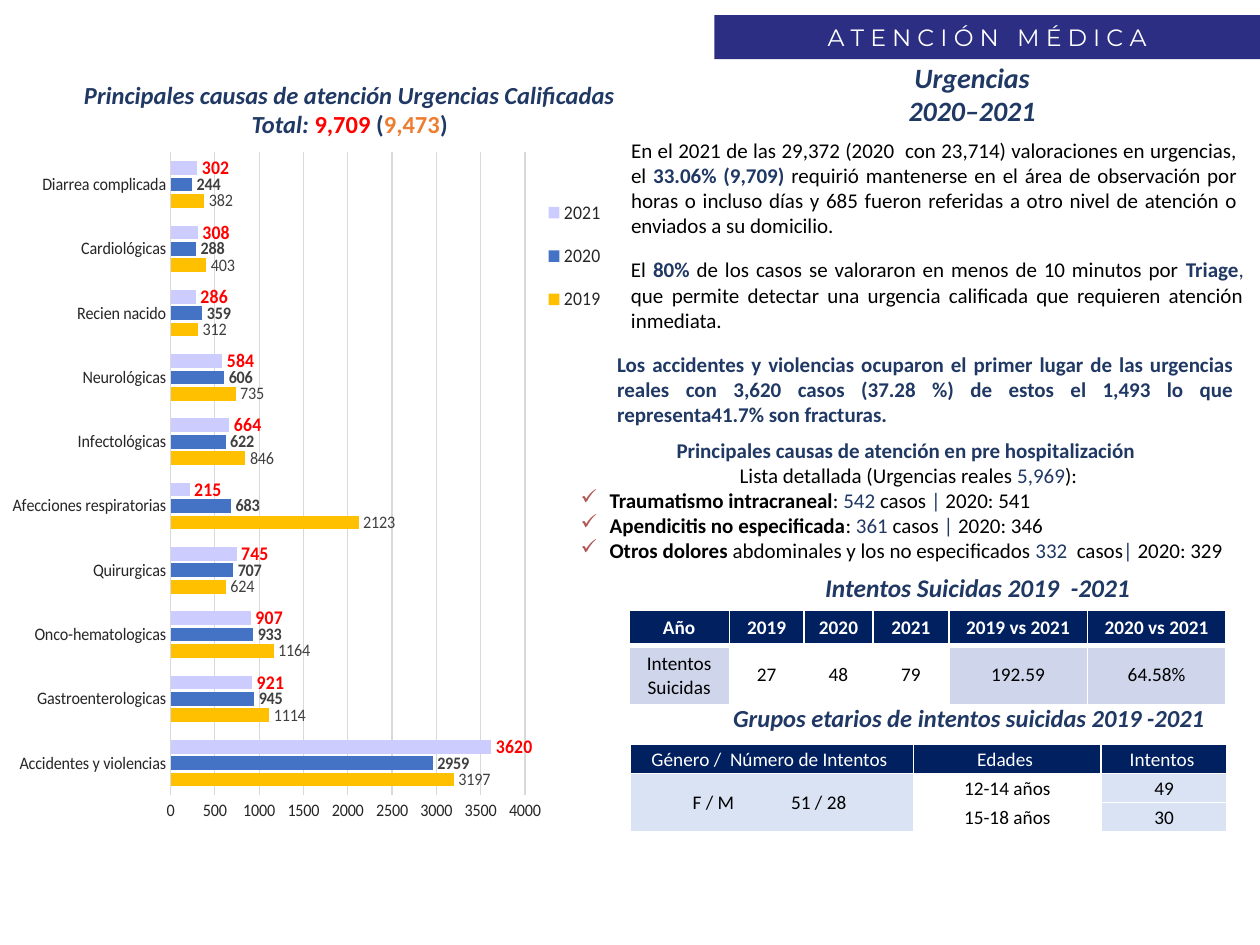
from lxml.etree import SubElement
from pptx import Presentation
from pptx.chart.data import CategoryChartData
from pptx.dml.color import RGBColor
from pptx.enum.chart import XL_CHART_TYPE, XL_LABEL_POSITION, XL_LEGEND_POSITION, XL_TICK_MARK
from pptx.enum.shapes import MSO_SHAPE
from pptx.enum.text import MSO_ANCHOR, MSO_AUTO_SIZE, PP_ALIGN
from pptx.oxml import parse_xml
from pptx.oxml.ns import nsdecls, qn
from pptx.util import Inches, Pt

NAVY = RGBColor(0x20, 0x38, 0x64)
HEADER = RGBColor(0x00, 0x20, 0x60)
BANNER = RGBColor(0x2C, 0x2E, 0x83)
RED = RGBColor(0xFF, 0x00, 0x00)
ORANGE = RGBColor(0xED, 0x7D, 0x31)
BLACK = RGBColor(0x00, 0x00, 0x00)
WHITE = RGBColor(0xFF, 0xFF, 0xFF)
INK = RGBColor(0x26, 0x26, 0x26)
LABEL_GREY = RGBColor(0x40, 0x40, 0x40)
GRID_GREY = RGBColor(0xD9, 0xD9, 0xD9)
LILAC = RGBColor(0xCC, 0xCC, 0xFF)
BLUE = RGBColor(0x44, 0x72, 0xC4)
GOLD = RGBColor(0xFF, 0xC0, 0x00)
PALE_VIOLET = RGBColor(0xCF, 0xD5, 0xEA)
PALE_BLUE = RGBColor(0xDA, 0xE3, 0xF3)
CHECK = RGBColor(0xB0, 0x57, 0x57)

# Text formats
BODY = {"size": Pt(12), "bold": False, "rgb": BLACK}
BODY_BOLD = {**BODY, "bold": True}
BLUE_TEXT = {**BODY, "rgb": NAVY}
BLUE_BOLD = {**BLUE_TEXT, "bold": True}
HEADING = {"size": Pt(14), "bold": True, "italic": True, "rgb": NAVY}
TOTAL = {**HEADING, "italic": False}
CELL = {"size": Pt(11), "bold": False, "rgb": BLACK}
CELL_HEAD = {**CELL, "rgb": WHITE}

# Grid of 100 columns by 75 rows
prs = Presentation()
prs.slide_width, prs.slide_height = Inches(10), Inches(7.5)
COL, ROW = prs.slide_width / 100, prs.slide_height / 75
slide = prs.slides.add_slide(prs.slide_layouts[5])


def write(frame, lines, align):
    """Fill a text frame with lines, each a list of (text, format) runs."""
    frame.word_wrap = True
    for index, line in enumerate(lines):
        paragraph = frame.paragraphs[0] if index == 0 else frame.add_paragraph()
        paragraph.alignment = align
        for text, style in line:
            run = paragraph.add_run()
            run.text = text
            for name, value in {"name": "Calibri", **style}.items():
                setattr(run.font.color if name == "rgb" else run.font, name, value)


def build_table(left, top, widths, heights, rows, fills, bottom_lines, margins):
    """Draw a table with white borders; rows hold (text, format) runs per cell."""
    table = slide.shapes.add_table(
        len(heights), len(widths), round(left * COL), round(top * ROW),
        round(sum(widths) * COL), round(sum(heights) * ROW)).table
    table.horz_banding = False
    for column, width in zip(table.columns, widths):
        column.width = round(width * COL)
    for r, height in enumerate(heights):
        table.rows[r].height = round(height * ROW)
        for c in range(len(widths)):
            cell = table.cell(r, c)
            cell.vertical_anchor = MSO_ANCHOR.MIDDLE
            for side, margin in margins.items():
                setattr(cell, f"margin_{side}", margin)
            for side, points in zip("LRTB", (1, 1, 1, bottom_lines[r])):
                cell._tc.get_or_add_tcPr().append(parse_xml(
                    f'<a:ln{side} {nsdecls("a")} w="{Pt(points)}"><a:solidFill>'
                    f'<a:srgbClr val="{WHITE}"/></a:solidFill></a:ln{side}>'))
            if fills[r][c] is None:
                cell.fill.background()
            else:
                cell.fill.solid()
                cell.fill.fore_color.rgb = fills[r][c]
            if rows[r][c]:
                write(cell.text_frame, [rows[r][c]], PP_ALIGN.CENTER)
    return table


# Banner
banner = slide.shapes.title
banner.left, banner.top = round(56.7 * COL), round(1.2 * ROW)
banner.width, banner.height = round(43.3 * COL), round(3.5 * ROW)
banner.fill.solid()
banner.fill.fore_color.rgb = BANNER
banner.text_frame.vertical_anchor = MSO_ANCHOR.MIDDLE
write(banner.text_frame,
      [[("A T E N C I Ó N   M É D I C A", {"name": "Montserrat", "size": Pt(13.5), "rgb": WHITE})]],
      PP_ALIGN.CENTER)

# Chart of causes, 2019 to 2021
causes = CategoryChartData()
causes.categories = ["Accidentes y violencias", "Gastroenterologicas", "Onco-hematologicas",
                     "Quirurgicas", "Afecciones respiratorias", "Infectológicas",
                     "Neurológicas", "Recien nacido", "Cardiológicas", "Diarrea complicada"]
causes.add_series("2019", [3197, 1114, 1164, 624, 2123, 846, 735, 312, 403, 382])
causes.add_series("2020", [2959, 945, 933, 707, 683, 622, 606, 359, 288, 244])
causes.add_series("2021", [3620, 921, 907, 745, 215, 664, 584, 286, 308, 302])
chart = slide.shapes.add_chart(
    XL_CHART_TYPE.BAR_CLUSTERED, round(COL), round(10.4 * ROW),
    round(47.7 * COL), round(56.7 * ROW), causes).chart
chart.has_title = False
chart.has_legend = True
chart.legend.position = XL_LEGEND_POSITION.BOTTOM
chart.legend.include_in_layout = False
categories, values = chart.category_axis, chart.value_axis
for part, size, color in ((chart, 10, BLACK), (categories.tick_labels, 10, INK),
                          (values.tick_labels, 10, INK), (chart.legend, 11, INK)):
    part.font.name, part.font.size = "Calibri", Pt(size)
    part.font.color.rgb = color
for axis in (categories, values):
    axis.major_tick_mark = axis.minor_tick_mark = XL_TICK_MARK.NONE
values.minimum_scale, values.maximum_scale, values.major_unit = 0, 4000, 500
values.format.line.fill.background()
for line in (categories.format.line, values.major_gridlines.format.line):
    line.color.rgb, line.width = GRID_GREY, Pt(0.75)

plot = chart.plots[0]
plot.gap_width, plot.overlap, plot.vary_by_categories = 130, -20, False
series_formats = ((GOLD, 10, False, LABEL_GREY), (BLUE, 10, True, LABEL_GREY), (LILAC, 11, True, RED))
for series, (fill, size, bold, color) in zip(plot.series, series_formats):
    series.format.fill.solid()
    series.format.fill.fore_color.rgb = fill
    labels = series.data_labels
    labels.show_value, labels.position = True, XL_LABEL_POSITION.OUTSIDE_END
    labels.font.name, labels.font.size, labels.font.bold = "Calibri", Pt(size), bold
    labels.font.color.rgb = color

# Plot and legend places, as shares of the chart
plot_area = chart._chartSpace.chart.plotArea
for old in plot_area.findall(qn("c:layout")):
    plot_area.remove(old)
legend_xml = chart.legend._element
for old in legend_xml.findall(qn("c:layout")):
    legend_xml.remove(old)
for parent, index, target, box in ((plot_area, 0, "inner", (0.2, 0.03, 0.64, 0.9)),
                                   (legend_xml, 1, None, (0.87, 0.07, 0.12, 0.21))):
    layout = parse_xml(f'<c:layout {nsdecls("c")}><c:manualLayout/></c:layout>')
    settings = {"layoutTarget": target, "xMode": "edge", "yMode": "edge",
                **dict(zip("xywh", box))}
    for tag, value in settings.items():
        if value is not None:
            SubElement(layout[0], qn(f"c:{tag}")).set("val", str(value))
    parent.insert(index, layout)

# Headings and paragraphs: left, top, width, height, corner, anchor, alignment, lines
URGENCIES = {**HEADING, "size": Pt(16)}
blocks = [
    (4.3, 5.6, 46.9, 6.2, 0.14, MSO_ANCHOR.TOP, PP_ALIGN.CENTER,
     [[("Principales causas de atención Urgencias Calificadas", HEADING)],
      [("Total: ", HEADING), ("9,709 ", {**TOTAL, "rgb": RED}), ("(", TOTAL),
       ("9,473", {**TOTAL, "rgb": ORANGE}), (")", TOTAL)]]),
    (52.7, 4.6, 48.9, 5.7, 0.44, MSO_ANCHOR.MIDDLE, PP_ALIGN.CENTER,
     [[("Urgencias", URGENCIES)], [("2020–2021", URGENCIES)]]),
    (49.1, 10.4, 50.1, 9.1, 0, MSO_ANCHOR.TOP, PP_ALIGN.JUSTIFY,
     [[("En el 2021 de las 29,372 (2020  con 23,714) valoraciones en urgencias, el ", BODY),
       ("33.06% (9,709) ", BLUE_BOLD),
       ("requirió mantenerse en el área de observación por horas o incluso días y 685 fueron "
        "referidas a otro nivel de atención o enviados a su domicilio.", BODY)]]),
    (49.1, 19.9, 50.6, 7.1, 0, MSO_ANCHOR.TOP, PP_ALIGN.JUSTIFY,
     [[("El ", BODY), ("80% ", BLUE_BOLD),
       ("de los casos se valoraron en menos de 10 minutos por ", BODY),
       ("Triage", BLUE_BOLD), (",", BLUE_TEXT),
       (" que permite detectar una urgencia calificada que requieren atención inmediata.", BODY)]]),
    (48, 27.4, 50.9, 7.1, 0, MSO_ANCHOR.TOP, PP_ALIGN.JUSTIFY,
     [[("Los accidentes y violencias ocuparon el primer lugar de las urgencias reales con 3,620 "
        "casos (37.28 %) de estos el 1,493 lo que representa41.7% son fracturas.", BLUE_BOLD)]]),
]
for left, top, width, height, corner, anchor, align, lines in blocks:
    block = slide.shapes.add_shape(MSO_SHAPE.ROUNDED_RECTANGLE, round(left * COL), round(top * ROW),
                                   round(width * COL), round(height * ROW))
    block.adjustments[0] = corner
    block.shadow.inherit = False
    block.fill.background()
    block.line.fill.background()
    block.text_frame.vertical_anchor = anchor
    write(block.text_frame, lines, align)

# Detailed list and table headings
diagnoses = [("Traumatismo intracraneal", ": ", "542 ", "casos ", "| ", "2020: 541"),
             ("Apendicitis no especificada", ": ", "361", " casos ", "| ", "2020: 346"),
             ("Otros dolores ", "abdominales y los no especificados ", "332", "  casos", "|", " 2020: 329")]
diagnosis_formats = (BODY_BOLD, BODY, BLUE_TEXT, BODY, BLUE_TEXT, BODY)
detail = [[("Principales causas de atención en pre hospitalización ", BLUE_BOLD)],
          [("Lista detallada (Urgencias reales ", BODY), ("5,969", BLUE_TEXT), ("):", BODY)],
          *[list(zip(parts, diagnosis_formats)) for parts in diagnoses]]
for left, top, width, height, align, lines in (
        (45.1, 34.2, 54, 11.1, PP_ALIGN.CENTER, detail),
        (64.5, 44.9, 30.9, 3.5, PP_ALIGN.LEFT,
         [[("Intentos Suicidas 2019  -2021", {**HEADING, "size": Pt(14.5)})]]),
        (57.2, 55.3, 42.8, 3.4, PP_ALIGN.LEFT,
         [[("Grupos etarios de intentos suicidas 2019 -2021", HEADING)]])):
    note = slide.shapes.add_textbox(round(left * COL), round(top * ROW),
                                    round(width * COL), round(height * ROW))
    write(note.text_frame, lines, align)
    note.text_frame.auto_size = MSO_AUTO_SIZE.SHAPE_TO_FIT_TEXT
    for paragraph in note.text_frame.paragraphs[2:]:
        paragraph.alignment = PP_ALIGN.LEFT
        properties = paragraph._p.get_or_add_pPr()
        properties.set("marL", str(Inches(0.23)))
        properties.set("indent", str(-Inches(0.23)))
        SubElement(SubElement(properties, qn("a:buClr")), qn("a:srgbClr")).set("val", str(CHECK))
        SubElement(properties, qn("a:buChar")).set("char", "✓")

# Attempts by year
years = ["Año", "2019", "2020", "2021", "2019 vs 2021", "2020 vs 2021"]
attempts = ["Intentos Suicidas", "27", "48", "79", "192.59", "64.58%"]
build_table(49.9, 48.4, (8, 5.9, 5.5, 6, 11, 11), (2.8, 4.7),
            [[[(text, {**CELL_HEAD, "bold": True})] for text in years],
             [[(text, CELL)] for text in attempts]],
            [[HEADER] * 6, [PALE_VIOLET, None, None, None, PALE_VIOLET, PALE_VIOLET]], (3, 1), {})

# Attempts by age group
group_heads = ["Género /  Número de Intentos ", "Edades ", "Intentos "]
age_groups = build_table(
    50, 59.1, (22.5, 14.9, 10), (2.3, 2.3, 2.3),
    [[[(text, CELL_HEAD)] for text in group_heads],
     [[("F / M", CELL), (" ", CELL), ("51 / 28 ", CELL)], [("12-14 años", CELL)], [("49", CELL)]],
     [None, [("15-18 años", CELL)], [("30", CELL)]]],
    [[HEADER] * 3] + [[PALE_BLUE, WHITE, PALE_BLUE]] * 2, (1, 1, 1),
    {"left": Inches(0.01), "top": Inches(0.01), "right": Inches(0.01), "bottom": 0})
age_groups.cell(1, 0).merge(age_groups.cell(2, 0))
gap = age_groups.cell(1, 0).text_frame.paragraphs[0].runs[1]
gap.font._element.set("spc", "3000")

prs.save("out.pptx")
